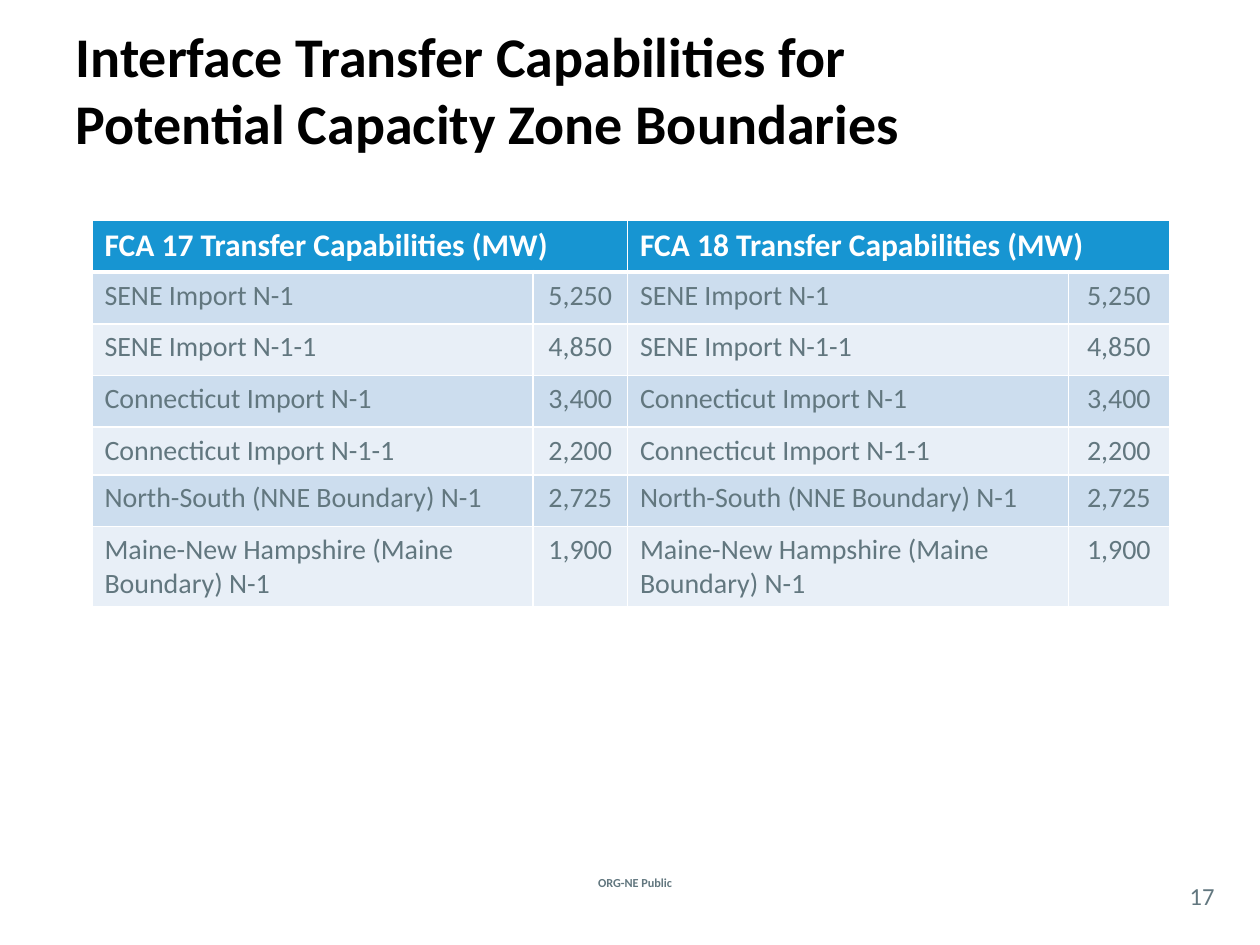
import copy
import dataclasses

import pptx
import pptx.dml.color
import pptx.enum.text
import pptx.oxml
import pptx.oxml.ns
import pptx.util

ALIGN = pptx.enum.text.PP_ALIGN
MIDDLE = pptx.enum.text.MSO_ANCHOR.MIDDLE


@dataclasses.dataclass(frozen=True)
class Theme:
    font: str = "Calibri"
    title: str = "000000"
    body: str = "62777F"
    white: str = "FFFFFF"
    header: str = "1795D2"
    bands: tuple = ("CCDDEE", "E8EFF7")
    title_size: int = 32
    header_size: int = 18
    body_size: int = 16
    number_size: int = 14
    footer_size: int = 7


THEME = Theme()
LIMITS = (
    ("SENE Import N-1", "5,250"),
    ("SENE Import N-1-1", "4,850"),
    ("Connecticut Import N-1", "3,400"),
    ("Connecticut Import N-1-1", "2,200"),
    ("North-South (NNE Boundary) N-1", "2,725"),
    ("Maine-New Hampshire (Maine Boundary) N-1", "1,900"),
)
AUCTIONS = ("FCA 17", "FCA 18")
COLUMN_WIDTHS = (3.5, 0.75, 3.5, 0.8)
ROW_HEIGHTS = (0.41, 0.41, 0.41, 0.41, 0.38, 0.41, 0.61)


def inches(values):
    return [pptx.util.Inches(value) for value in values]


def write(frame, text, size, color, bold=False, align=ALIGN.LEFT):
    frame.word_wrap = True
    para = frame.paragraphs[0]
    para.text = text
    para.alignment = align
    for span in para.runs:
        span.font.name = THEME.font
        span.font.size = pptx.util.Pt(size)
        span.font.bold = bold
        span.font.color.rgb = pptx.dml.color.RGBColor.from_string(color)
    for line_break in para._p.findall(pptx.oxml.ns.qn("a:br")):
        line_break.append(copy.deepcopy(para.runs[0]._r.rPr))


def add_title(page, box, text):
    title = page.shapes.title
    title.left, title.top, title.width, title.height = inches(box)
    frame = title.text_frame
    frame.auto_size = pptx.enum.text.MSO_AUTO_SIZE.NONE
    frame.vertical_anchor = MIDDLE
    write(frame, text, THEME.title_size, THEME.title, bold=True)


def add_label(page, box, text, size, bold=False, margin=0):
    frame = page.shapes.add_textbox(*inches(box)).text_frame
    frame.margin_left = frame.margin_right = pptx.util.Inches(margin)
    frame.margin_top = frame.margin_bottom = 0
    frame.vertical_anchor = MIDDLE
    write(frame, text, size, THEME.body, bold=bold, align=ALIGN.CENTER)


def paint_cell(cell, color, bottom=1):
    properties = cell._tc.get_or_add_tcPr()
    for side, points in (("L", 1), ("R", 1), ("T", 1), ("B", bottom)):
        properties.append(pptx.oxml.parse_xml(
            f'<a:ln{side} {pptx.oxml.ns.nsdecls("a")} w="{pptx.util.Pt(points)}">'
            f'<a:solidFill><a:srgbClr val="{THEME.white}"/></a:solidFill></a:ln{side}>'
        ))
    cell.fill.solid()
    cell.fill.fore_color.rgb = pptx.dml.color.RGBColor.from_string(color)


def add_limits_table(page, left, top):
    box = (left, top, sum(COLUMN_WIDTHS), sum(ROW_HEIGHTS))
    table = page.shapes.add_table(
        len(ROW_HEIGHTS), len(COLUMN_WIDTHS), *inches(box)
    ).table
    for column, width in zip(table.columns, inches(COLUMN_WIDTHS)):
        column.width = width
    for row, height in zip(table.rows, inches(ROW_HEIGHTS)):
        row.height = height

    for cell in table.rows[0].cells:
        paint_cell(cell, THEME.header, bottom=3)
    for index, auction in enumerate(AUCTIONS):
        cell = table.cell(0, index * 2)
        cell.merge(table.cell(0, index * 2 + 1))
        write(cell.text_frame, f"{auction} Transfer Capabilities (MW)",
              THEME.header_size, THEME.white, bold=True)

    for row, limit in enumerate(LIMITS, start=1):
        for column, text in enumerate(limit * len(AUCTIONS)):
            cell = table.cell(row, column)
            paint_cell(cell, THEME.bands[(row - 1) % 2])
            write(cell.text_frame, text, THEME.body_size, THEME.body,
                  align=ALIGN.CENTER if column % 2 else ALIGN.LEFT)


def main():
    deck = pptx.Presentation()
    deck.slide_width, deck.slide_height = inches((10, 7.5))
    page = deck.slides.add_slide(deck.slide_layouts[5])
    add_label(page, (4.08, 6.92, 1.92, 0.17), "ORG-NE Public",
              THEME.footer_size, bold=True, margin=0.1)
    add_label(page, (9.33, 6.96, 0.42, 0.29), "17", THEME.number_size)
    add_title(page, (0.5, 0.08, 9, 1.25),
              "Interface Transfer Capabilities for\vPotential Capacity Zone Boundaries")
    add_limits_table(page, 0.73, 1.75)
    deck.save("out.pptx")


if __name__ == "__main__":
    main()
